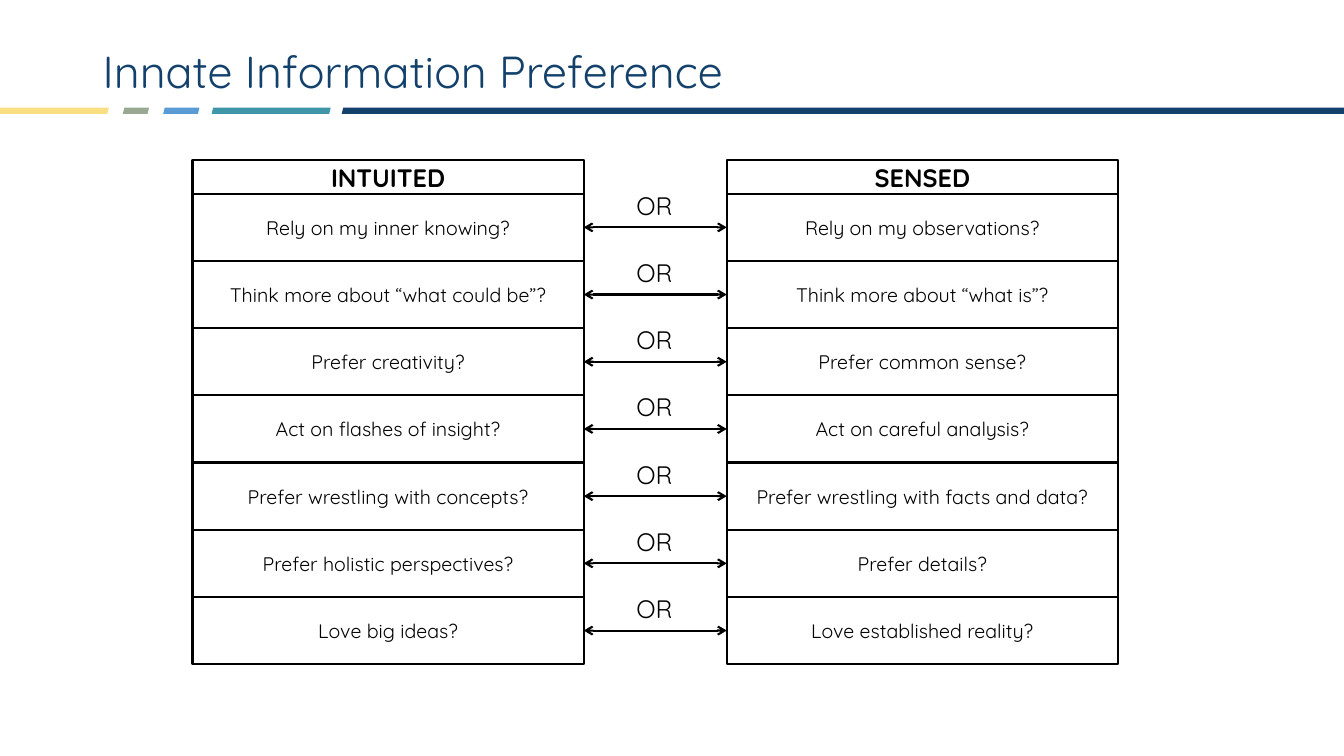
from dataclasses import dataclass

import pptx
import pptx.dml.color
import pptx.enum.shapes
import pptx.enum.text
import pptx.oxml
import pptx.oxml.ns
import pptx.util

Pt = pptx.util.Pt
RGB = pptx.dml.color.RGBColor.from_string
SHAPE = pptx.enum.shapes.MSO_SHAPE
ALIGN = pptx.enum.text.PP_ALIGN
MIDDLE = pptx.enum.text.MSO_ANCHOR.MIDDLE
AUTO_SIZE = pptx.enum.text.MSO_AUTO_SIZE


@dataclass(frozen=True)
class Theme:
    font: str = "Quicksand"
    ink: str = "000000"
    navy: str = "13416C"
    yellow: str = "FADF82"
    sage: str = "99A893"
    blue: str = "5B9BD5"
    teal: str = "3E96A8"
    title_size: float = 32
    heading_size: float = 18
    body_size: float = 14
    line_width: float = 1.5


THEME = Theme()
HEADING_HEIGHT = 24
ROW_HEIGHT = 48
COLUMN_WIDTH = 279.5

STRIPES = [
    (-2.9, 80.6, THEME.yellow),
    (87.8, 18.7, THEME.sage),
    (116.6, 25.9, THEME.blue),
    (151.2, 85, THEME.teal),
    (244.1, 718.6, THEME.navy),
]

PREFERENCES = [
    ("Rely on my inner knowing?", "Rely on my observations?"),
    ("Think more about “what could be”?", "Think more about “what is”?"),
    ("Prefer creativity?", "Prefer common sense?"),
    ("Act on flashes of insight?", "Act on careful analysis?"),
    ("Prefer wrestling with concepts?", "Prefer wrestling with facts and data?"),
    ("Prefer holistic perspectives?", "Prefer details?"),
    ("Love big ideas?", "Love established reality?"),
]


def write(frame, words, size, color=THEME.ink, align=ALIGN.CENTER, bold=False):
    paragraph = frame.paragraphs[0]
    paragraph.alignment = align
    run = paragraph.add_run()
    run.text = words
    run.font.name = THEME.font
    run.font.size = Pt(size)
    run.font.bold = bold
    run.font.color.rgb = RGB(color)
    return paragraph


def add_title(slide, left, top, width, height):
    title = slide.shapes.title
    title.left, title.top = Pt(left), Pt(top)
    title.width, title.height = Pt(width), Pt(height)
    frame = title.text_frame
    frame.auto_size = AUTO_SIZE.NONE
    frame.word_wrap = True
    frame.vertical_anchor = MIDDLE
    heading = write(frame, "Innate Information Preference", THEME.title_size,
                    THEME.navy, ALIGN.LEFT)
    heading.line_spacing = 0.9


def add_stripes(slide, top, height):
    for left, width, color in STRIPES:
        stripe = slide.shapes.add_shape(
            SHAPE.PARALLELOGRAM, Pt(left), Pt(top), Pt(width), Pt(height))
        stripe.shadow.inherit = False
        stripe.fill.solid()
        stripe.fill.fore_color.rgb = RGB(color)
        stripe.line.fill.background()


def add_cell(slide, left, top, height, words, size, bold=False):
    cell = slide.shapes.add_shape(
        SHAPE.RECTANGLE, Pt(left), Pt(top), Pt(COLUMN_WIDTH), Pt(height))
    cell.shadow.inherit = False
    cell.fill.background()
    cell.line.color.rgb = RGB(THEME.ink)
    cell.line.width = Pt(THEME.line_width)
    cell.text_frame.word_wrap = True
    cell.text_frame.vertical_anchor = MIDDLE
    write(cell.text_frame, words, size, bold=bold)
    return cell


def add_column(slide, left, top, heading, questions):
    add_cell(slide, left, top, HEADING_HEIGHT, heading, THEME.heading_size, bold=True)
    first_row = top + HEADING_HEIGHT
    return [
        add_cell(slide, left, first_row + row * ROW_HEIGHT, ROW_HEIGHT,
                 question, THEME.body_size)
        for row, question in enumerate(questions)
    ]


def add_choice(slide, intuited, sensed):
    arrow = slide.shapes.add_connector(
        pptx.enum.shapes.MSO_CONNECTOR.STRAIGHT, 0, 0, 0, 0)
    arrow.begin_connect(intuited, 3)
    arrow.end_connect(sensed, 1)
    arrow.line.color.rgb = RGB(THEME.ink)
    arrow.line.width = Pt(THEME.line_width)
    outline = arrow.line._get_or_add_ln()
    for end in ("a:headEnd", "a:tailEnd"):
        pptx.oxml.ns.qn(end)
        outline.append(pptx.oxml.parse_xml(
            f'<{end} {pptx.oxml.ns.nsdecls("a")} type="arrow"/>'))
    arrow._element.spPr.append(pptx.oxml.parse_xml(
        f'<a:effectLst {pptx.oxml.ns.nsdecls("a")}/>'))

    width, height, rise = Pt(41), Pt(29), Pt(6.2)
    gap_left = intuited.left + intuited.width
    center = (gap_left + sensed.left) // 2
    label = slide.shapes.add_textbox(
        center - width // 2, intuited.top - rise, width, height)
    label.text_frame.word_wrap = False
    label.text_frame.auto_size = AUTO_SIZE.SHAPE_TO_FIT_TEXT
    write(label.text_frame, "OR", THEME.heading_size, align=ALIGN.LEFT)


def add_comparison(slide, left, top, width):
    intuited, sensed = zip(*PREFERENCES)
    intuited_cells = add_column(slide, left, top, "INTUITED", intuited)
    sensed_cells = add_column(
        slide, left + width - COLUMN_WIDTH, top, "SENSED", sensed)
    for pair in zip(intuited_cells, sensed_cells):
        add_choice(slide, *pair)


def main():
    deck = pptx.Presentation()
    deck.slide_width, deck.slide_height = Pt(960), Pt(540)
    slide = deck.slides.add_slide(deck.slide_layouts[5])
    add_stripes(slide, top=77, height=4.3)
    add_title(slide, left=66.2, top=28.8, width=828, height=48.2)
    add_comparison(slide, left=137.5, top=114.4, width=661.1)
    deck.save("out.pptx")


if __name__ == "__main__":
    main()
